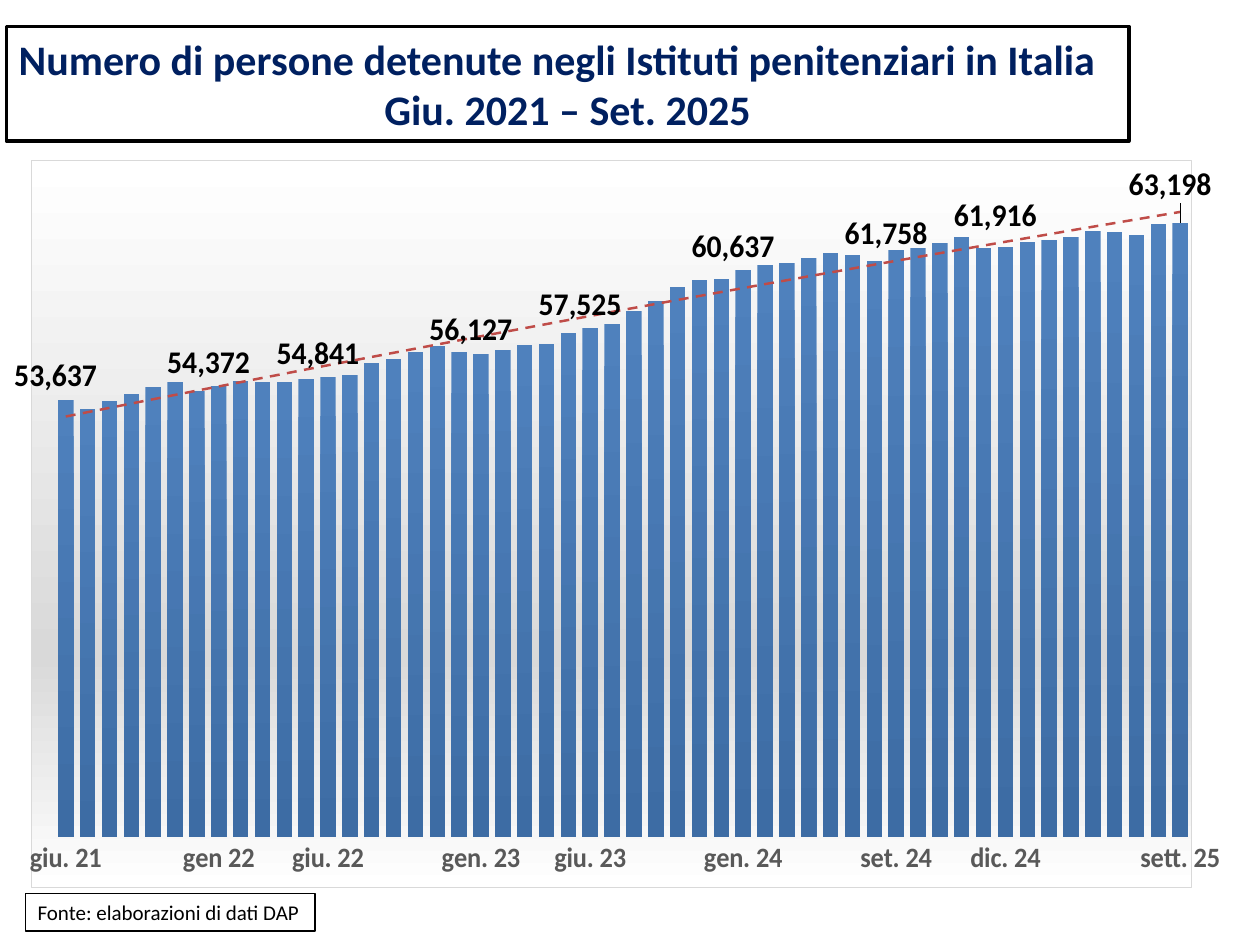
from lxml import etree
from pptx import Presentation
from pptx.chart.data import CategoryChartData
from pptx.dml.color import RGBColor
from pptx.enum.chart import XL_CHART_TYPE, XL_LABEL_POSITION, XL_TICK_MARK
from pptx.enum.shapes import MSO_SHAPE
from pptx.enum.text import MSO_ANCHOR, PP_ALIGN
from pptx.oxml.ns import qn
from pptx.util import Inches, Pt

COLUMNS = XL_CHART_TYPE.COLUMN_CLUSTERED
OUTSIDE = XL_LABEL_POSITION.OUTSIDE_END
NO_TICK = XL_TICK_MARK.NONE
RECTANGLE = MSO_SHAPE.RECTANGLE
MIDDLE = MSO_ANCHOR.MIDDLE
LEFT, CENTER = PP_ALIGN.LEFT, PP_ALIGN.CENTER

WIDTH, HEIGHT = 10, 7.5
FONT = "Calibri"
COLORS = {
    "white": "FFFFFF", "black": "000000", "navy": "002060",
    "gray": "595959", "silver": "D9D9D9", "blue": "4F81BD",
    "deep": "3D6CA4", "pale": "DCE6F2", "red": "BF4C48",
}
NAMESPACES = (
    'xmlns:c="http://schemas.openxmlformats.org/drawingml/2006/chart" '
    'xmlns:a="http://schemas.openxmlformats.org/drawingml/2006/main"'
)
NUMBER_FORMAT = '_-* #,##0\\ _€_-;\\-* #,##0\\ _€_-;_-* "-"?'

DETAINEES = [
    53637, 53129, 53557, 53930, 54307, 54593, 54134, 54372, 54635, 54609,
    54595, 54771, 54841, 54979, 55637, 55835, 56225, 56524, 56196, 56127,
    56319, 56605, 56674, 57230, 57525, 57749, 58428, 58987, 59715, 60116,
    60166, 60637, 60924, 61049, 61297, 61547, 61480, 61133, 61758, 61862,
    62110, 62464, 61861, 61916, 62165, 62281, 62445, 62761, 62728, 62569,
    63167, 63198,
]
MONTHS = {
    0: "giu. 21", 7: "gen 22", 12: "giu. 22", 19: "gen. 23", 24: "giu. 23",
    31: "gen. 24", 38: "set. 24", 43: "dic. 24", 51: "sett. 25",
}
LABEL_SHIFTS = {38: 0.01, 43: -0.01, 51: -0.02}


def rgb(name):
    return RGBColor.from_string(COLORS[name])


def element(markup):
    head, tail = markup.split(">", 1)
    return etree.fromstring(f"{head} {NAMESPACES}>{tail}")


def solid(name):
    return f'<a:solidFill><a:srgbClr val="{COLORS[name]}"/></a:solidFill>'


def gradient(*stops):
    marks = "".join(
        f'<a:gs pos="{share * 1000}"><a:srgbClr val="{COLORS[name]}"/></a:gs>'
        for share, name in stops
    )
    return f'<a:gradFill><a:gsLst>{marks}</a:gsLst><a:lin ang="5400000" scaled="0"/></a:gradFill>'


def outline(name, points, dash="solid"):
    return f'<a:ln w="{int(Pt(points))}">{solid(name)}<a:prstDash val="{dash}"/></a:ln>'


def manual_layout(inner):
    return element(f"<c:layout><c:manualLayout>{inner}</c:manualLayout></c:layout>")


def style_font(font, size, color, bold=False):
    font.name = FONT
    font.size = Pt(size)
    font.bold = bold
    font.color.rgb = rgb(color)


def write(para, text, size=12, color="black", bold=False, align=LEFT):
    para.alignment = align
    span = para.add_run()
    span.text = text
    style_font(span.font, size, color, bold)


def add_box(page, left, top, width, height, border):
    box = page.shapes.add_shape(
        RECTANGLE, *(Inches(n) for n in (left, top, width, height))
    )
    box.shadow.inherit = False
    box.fill.solid()
    box.fill.fore_color.rgb = rgb("white")
    box.line.color.rgb = rgb("black")
    box.line.width = Pt(border)
    frame = box.text_frame
    frame.word_wrap = True
    frame.vertical_anchor = MIDDLE
    return frame


def label_point(series, index):
    label = series.points[index].data_label
    style_font(label.font, 18, "black", True)
    label.position = OUTSIDE
    fill = "pale" if index == len(DETAINEES) - 1 else "white"
    number = element('<c:numFmt sourceLinked="0"></c:numFmt>')
    number.set("formatCode", NUMBER_FORMAT)
    parts = [number, element(f"<c:spPr>{solid(fill)}{outline('blue', 2)}</c:spPr>")]
    if index in LABEL_SHIFTS:
        parts.insert(0, manual_layout(f'<c:x val="0"/><c:y val="{LABEL_SHIFTS[index]}"/>'))
    previous = series.points[index].data_label._dLbl.find(qn("c:idx"))
    for part in parts:
        previous.addnext(part)
        previous = part


def style_series(series):
    series.invert_if_negative = False
    bars = series._element.get_or_add_spPr()
    bars.append(element(gradient((0, "blue"), (100, "deep"))))
    series.data_labels.show_value = False
    for index in MONTHS:
        label_point(series, index)
    trend = element(
        f"<c:trendline><c:spPr>{outline('red', 1.5, 'dash')}</c:spPr>"
        '<c:trendlineType val="poly"/><c:order val="2"/>'
        '<c:dispRSqr val="0"/><c:dispEq val="0"/></c:trendline>'
    )
    series._element.find(qn("c:cat")).addprevious(trend)


def style_axes(chart):
    values = chart.value_axis
    values.minimum_scale, values.maximum_scale = 30000, 65000
    values.has_major_gridlines = False
    values.visible = False
    months = chart.category_axis
    months.major_tick_mark = months.minor_tick_mark = NO_TICK
    months.format.line.fill.background()
    style_font(months.tick_labels.font, 16, "gray", True)
    months._element.find(qn("c:txPr")).find(qn("a:bodyPr")).set("rot", "-60000000")
    skip = element('<c:tickLblSkip val="1"></c:tickLblSkip>')
    months._element.find(qn("c:noMultiLvlLbl")).addprevious(skip)


def style_frame(chart):
    space = chart._chartSpace
    plot_area = space.find(qn("c:chart")).find(qn("c:plotArea"))
    for old in plot_area.findall(qn("c:layout")):
        plot_area.remove(old)
    shares = {"x": 0.03, "y": 0.04, "w": 0.98, "h": 0.89}
    sizes = "".join(f'<c:{key} val="{share}"/>' for key, share in shares.items())
    plot_area.insert(0, manual_layout(
        '<c:layoutTarget val="inner"/><c:xMode val="edge"/><c:yMode val="edge"/>' + sizes
    ))
    backdrop = gradient((0, "white"), (68, "silver"), (100, "white"))
    space.find(qn("c:chart")).addnext(
        element(f"<c:spPr>{backdrop}{outline('silver', 0.75)}</c:spPr>")
    )


def add_detainee_chart(page, left, top, width, height):
    data = CategoryChartData(number_format=NUMBER_FORMAT)
    data.categories = [MONTHS.get(index, "") for index in range(len(DETAINEES))]
    data.add_series("Series 1", DETAINEES)
    chart = page.shapes.add_chart(
        COLUMNS, *(Inches(n) for n in (left, top, width, height)), data
    ).chart
    style_font(chart.font, 11, "black")
    chart.has_title = chart.has_legend = False
    plot = chart.plots[0]
    plot.gap_width = 41
    plot.vary_by_categories = False
    style_series(plot.series[0])
    style_axes(chart)
    style_frame(chart)


def main():
    deck = Presentation()
    deck.slide_width, deck.slide_height = Inches(WIDTH), Inches(HEIGHT)
    page = deck.slides.add_slide(deck.slide_layouts[6])
    add_detainee_chart(page, 0.06, 1.27, 9.77, 5.78)
    title = add_box(page, 0.05, 0.21, 8.91, 0.91, 2)
    heading = {"size": 24, "color": "navy", "bold": True}
    write(title.paragraphs[0],
          "Numero di persone detenute negli Istituti penitenziari in Italia", **heading)
    write(title.add_paragraph(), "Giu. 2021 – Set. 2025", align=CENTER, **heading)
    source = add_box(page, 0.2, 7.09, 2.3, 0.3, 0.75)
    write(source.paragraphs[0], "Fonte: elaborazioni di dati DAP")
    deck.save("out.pptx")


if __name__ == "__main__":
    main()
